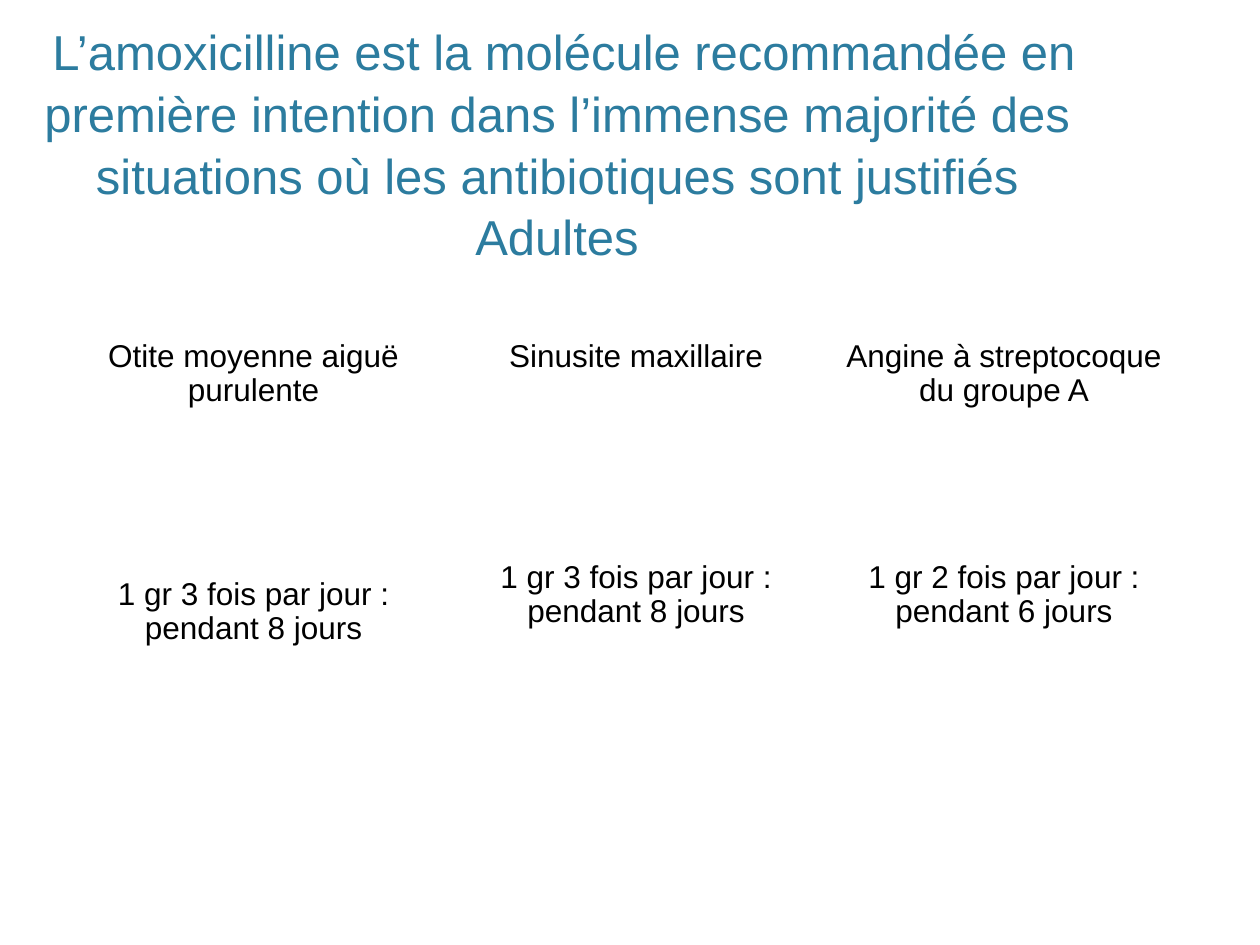
"""Build the slide on amoxicillin doses for adults."""
from pptx import Presentation
from pptx.dml.color import RGBColor
from pptx.enum.text import MSO_ANCHOR, MSO_AUTO_SIZE, PP_ALIGN
from pptx.util import Emu, Pt

CENTER = PP_ALIGN.CENTER
TOP, MIDDLE, BOTTOM = MSO_ANCHOR.TOP, MSO_ANCHOR.MIDDLE, MSO_ANCHOR.BOTTOM
NO_AUTOFIT = MSO_AUTO_SIZE.NONE
SCALE = 914400 // 126


def px(length):
    return Emu(length * SCALE)


def write(frame, text, size, color, spacing):
    frame.text = text
    for paragraph in frame.paragraphs:
        paragraph.alignment = CENTER
        paragraph.line_spacing = spacing
        for run in paragraph.runs:
            font_format = {"name": "Arial", "size": Pt(size), "bold": False}
            for key, value in font_format.items():
                setattr(run.font, key, value)
            run.font.color.rgb = RGBColor.from_string(color)


prs = Presentation()
prs.slide_width, prs.slide_height = px(1260), px(945)
slide = prs.slides.add_slide(prs.slide_layouts[5])

title = slide.shapes.title
title_place = {"left": -47, "top": 115, "width": 1208, "height": 157}
for key, value in title_place.items():
    setattr(title, key, px(value))
heading = title.text_frame
heading.auto_size = NO_AUTOFIT
heading.vertical_anchor = BOTTOM
write(heading, " L’amoxicilline est la molécule recommandée en première intention "
      "dans l’immense majorité des situations où les antibiotiques sont justifiés"
      "\vAdultes", 28, "2C7C9F", 1.05)

column_widths = [411, 354, 382]
row_height = 174
doses = [
    ["Otite moyenne aiguë\npurulente", "Sinusite maxillaire",
     "Angine à streptocoque du groupe A"],
    ["1 gr 3 fois par jour : pendant 8 jours",
     "1 gr 3 fois par jour : pendant 8 jours",
     "1 gr 2 fois par jour : pendant 6 jours"],
]
table = slide.shapes.add_table(
    len(doses), len(column_widths), px(48), px(334),
    px(sum(column_widths)), px(row_height * len(doses))).table
for column, width in zip(table.columns, column_widths):
    column.width = px(width)
for row, (texts, anchor) in enumerate(zip(doses, [TOP, MIDDLE])):
    table.rows[row].height = px(row_height)
    for col, text in enumerate(texts):
        cell = table.cell(row, col)
        cell.fill.background()
        cell.vertical_anchor = anchor
        write(cell.text_frame, text, 18, "000000", 0.97)
table.cell(1, 0).margin_top = px(41)

prs.save("out.pptx")
